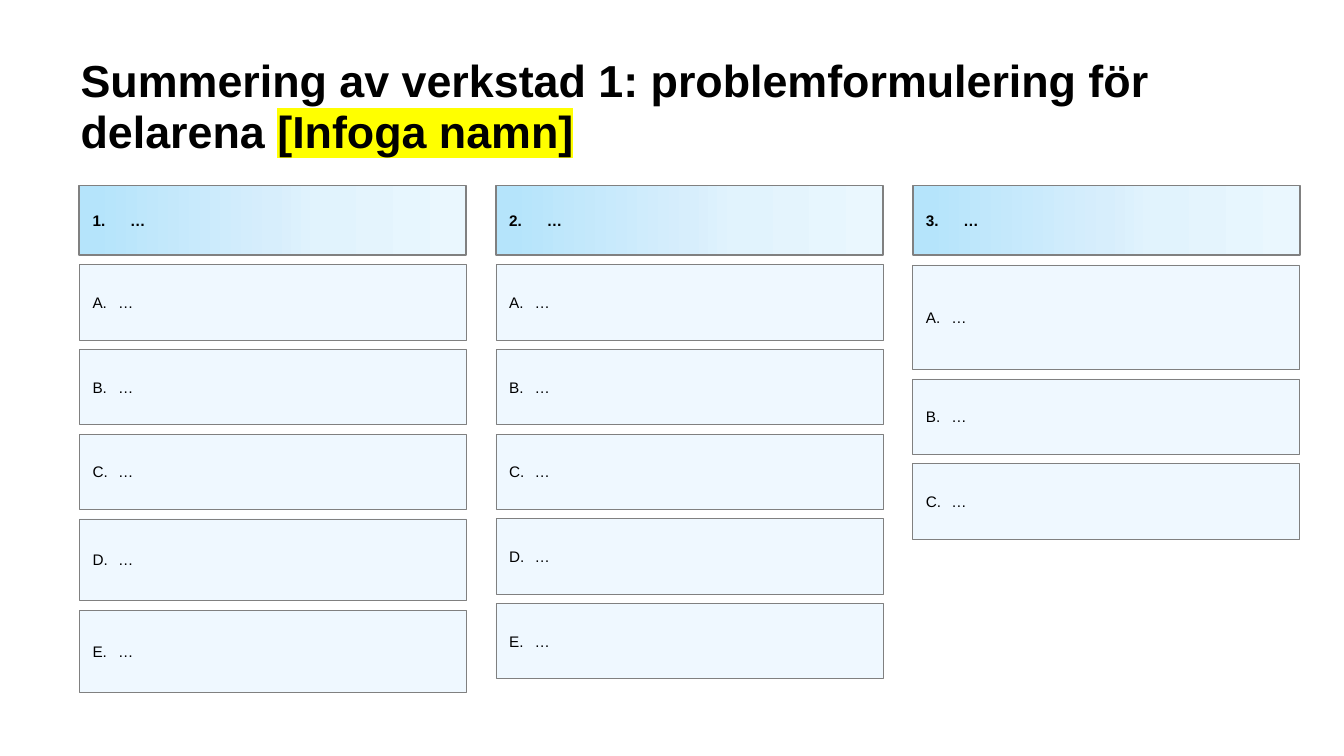
"""Build the workshop summary slide with three columns of lettered cards."""
from dataclasses import dataclass

from lxml.etree import SubElement
from pptx import Presentation
from pptx.dml.color import RGBColor
from pptx.enum.shapes import MSO_SHAPE
from pptx.enum.text import MSO_ANCHOR, MSO_AUTO_SIZE, PP_ALIGN
from pptx.oxml import parse_xml
from pptx.oxml.ns import nsdecls, qn
from pptx.util import Inches, Pt

BLACK = RGBColor(0x00, 0x00, 0x00)
GREY = RGBColor(0x80, 0x80, 0x80)
PALE_BLUE = RGBColor(0xEF, 0xF8, 0xFF)
YELLOW = RGBColor(0xFF, 0xFF, 0x00)
HEADER_STOPS = (
    (0, RGBColor(0xEA, 0xF7, 0xFE)),
    (38, RGBColor(0xE1, 0xF3, 0xFD)),
    (50, RGBColor(0xD7, 0xEE, 0xFC)),
    (96, RGBColor(0xB5, 0xE4, 0xFB)),
    (100, RGBColor(0xB3, 0xE3, 0xFA)),
)

SLIDE_WIDTH = Inches(10)
SLIDE_HEIGHT = SLIDE_WIDTH * 9 // 16
GRID_LEFT, GRID_TOP = 0.59, 1.38
COLUMN_WIDTH, COLUMN_PITCH = 2.88, 3.1
HEADER_HEIGHT, ROW_GAP = 0.52, 0.07
REGULAR, TALL, TALLEST = 0.56, 0.61, 0.78


@dataclass(frozen=True)
class Column:
    """Heights of the cards under one numbered header."""

    heights: tuple[float, ...]


@dataclass(frozen=True)
class Numbering:
    """Automatic numbering of a card, with its hanging indent in inches."""

    scheme: str
    start: int
    indent: float


COLUMNS = (
    Column((REGULAR,) * 3 + (TALL,) * 2),
    Column((REGULAR,) * 5),
    Column((TALLEST,) + (REGULAR,) * 2),
)


def add_text(paragraph, text: str, *, size: float, bold: bool = False, highlight=None) -> None:
    """Append a formatted run to a paragraph."""
    run = paragraph.add_run()
    run.text = text
    run.font.name = "Arial"
    run.font.size = Pt(size)
    run.font.bold = bold
    run.font.color.rgb = BLACK
    if highlight is not None:
        marker = parse_xml(
            f'<a:highlight {nsdecls("a")}><a:srgbClr val="{highlight}"/></a:highlight>'
        )
        run._r.rPr.find(qn("a:solidFill")).addnext(marker)


def number_paragraph(paragraph, numbering: Numbering) -> None:
    """Give a paragraph an automatic number and a hanging indent."""
    properties = paragraph._p.get_or_add_pPr()
    properties.set("marL", str(Inches(numbering.indent)))
    properties.set("indent", str(-Inches(numbering.indent)))
    colour = SubElement(properties, qn("a:buClr"))
    SubElement(colour, qn("a:srgbClr"), val=str(BLACK))
    SubElement(properties, qn("a:buFont"), typeface="Arial")
    SubElement(
        properties, qn("a:buAutoNum"), type=numbering.scheme, startAt=str(numbering.start)
    )


def fill_gradient(shape) -> None:
    """Fill a header with the multi-stop blue gradient."""
    stops = "".join(
        f'<a:gs pos="{share * 1000}"><a:srgbClr val="{colour}"/></a:gs>'
        for share, colour in HEADER_STOPS
    )
    gradient = parse_xml(
        f'<a:gradFill {nsdecls("a")} rotWithShape="1"><a:gsLst>{stops}</a:gsLst>'
        '<a:lin ang="10800000" scaled="0"/></a:gradFill>'
    )
    shape._element.spPr.find(qn("a:prstGeom")).addnext(gradient)


def add_card(
    slide, column: int, top: float, height: float, numbering: Numbering, header: bool = False
) -> None:
    """Draw one numbered card in a grid column."""
    card = slide.shapes.add_shape(
        MSO_SHAPE.RECTANGLE,
        Inches(GRID_LEFT + column * COLUMN_PITCH),
        Inches(top),
        Inches(COLUMN_WIDTH),
        Inches(height),
    )
    card.shadow.inherit = False
    if header:
        fill_gradient(card)
    else:
        card.fill.solid()
        card.fill.fore_color.rgb = PALE_BLUE
    card.line.color.rgb = GREY
    card.line.width = Pt(1 if header else 0.25)
    card.text_frame.word_wrap = True
    card.text_frame.vertical_anchor = MSO_ANCHOR.MIDDLE
    paragraph = card.text_frame.paragraphs[0]
    paragraph.alignment = PP_ALIGN.LEFT
    number_paragraph(paragraph, numbering)
    add_text(paragraph, "…", size=8.2, bold=header)


def add_column(slide, index: int, column: Column) -> None:
    """Draw a header and stack its lettered cards below it."""
    add_card(
        slide, index, GRID_TOP, HEADER_HEIGHT, Numbering("arabicPeriod", index + 1, 0.28), True
    )
    top = GRID_TOP + HEADER_HEIGHT + ROW_GAP
    for letter, height in enumerate(column.heights, start=1):
        add_card(slide, index, top, height, Numbering("alphaUcPeriod", letter, 0.19))
        top += height + ROW_GAP


def set_title(slide) -> None:
    """Place and format the title placeholder."""
    title = slide.shapes.title
    title.left, title.top = Inches(0.5), Inches(0.64)
    title.width, title.height = Inches(9.08), Inches(0.59)
    frame = title.text_frame
    frame.word_wrap = True
    frame.auto_size = MSO_AUTO_SIZE.NONE
    frame.vertical_anchor = MSO_ANCHOR.BOTTOM
    heading = frame.paragraphs[0]
    heading.alignment = PP_ALIGN.LEFT
    heading.line_spacing = 0.95
    add_text(
        heading, "Summering av verkstad 1: problemformulering för delarena ", size=24, bold=True
    )
    add_text(heading, "[Infoga namn]", size=24, bold=True, highlight=YELLOW)


def main() -> None:
    """Create and save the presentation."""
    presentation = Presentation()
    presentation.slide_width = SLIDE_WIDTH
    presentation.slide_height = SLIDE_HEIGHT
    slide = presentation.slides.add_slide(presentation.slide_layouts[5])
    set_title(slide)
    for index, column in enumerate(COLUMNS):
        add_column(slide, index, column)
    presentation.save("out.pptx")


if __name__ == "__main__":
    main()
